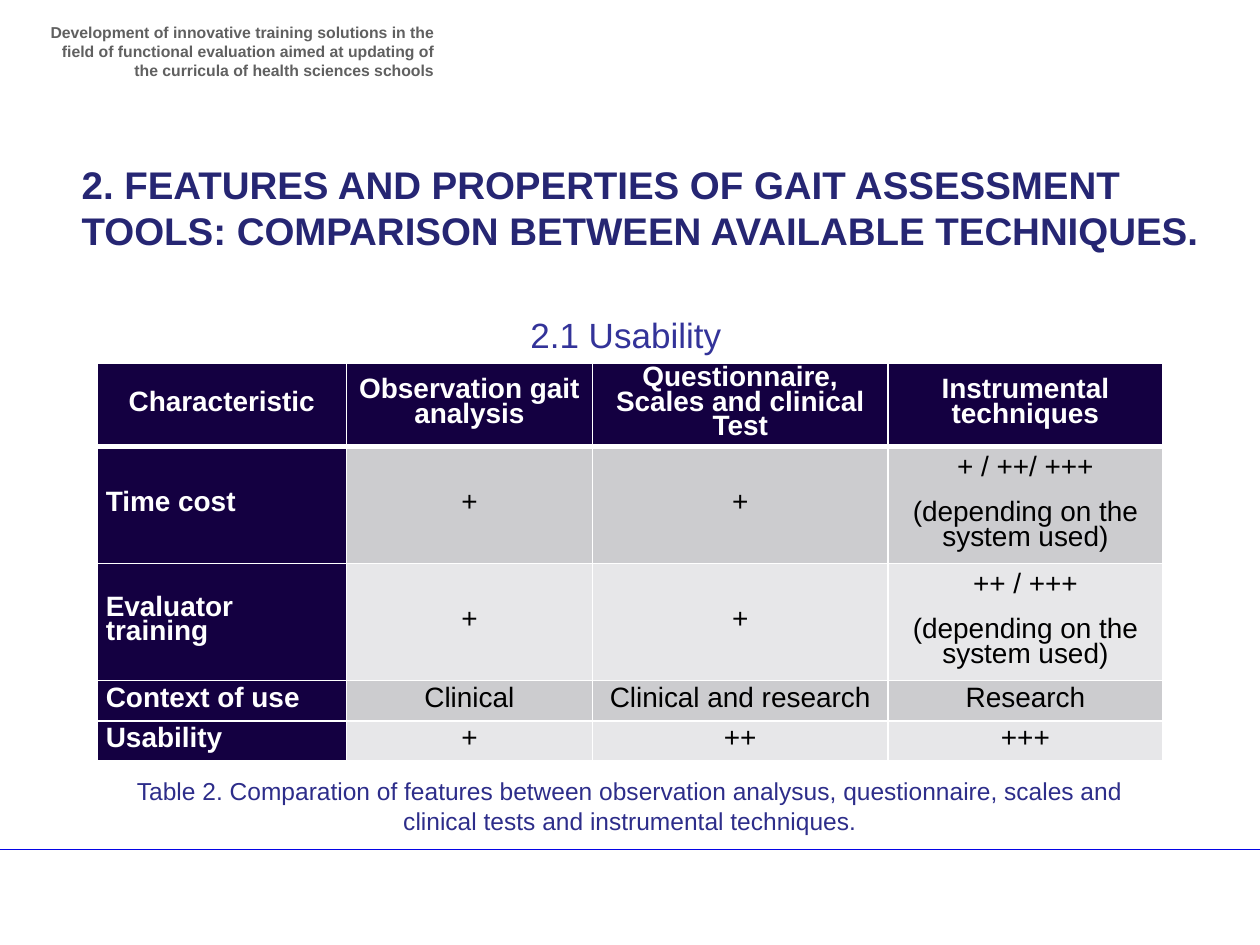
from pptx import Presentation
from pptx import util as u
from pptx.dml import color
from pptx.enum import shapes, text
from pptx.oxml import ns, xmlchemy

Pt = u.Pt
ALIGN = text.PP_ALIGN
FONT = "Arial"
COLORS = {
    "header": "606060",
    "title": "262673",
    "subtitle": "333399",
    "caption": "2D2D8A",
    "rule": "0404E6",
    "navy": "140041",
    "white": "FFFFFF",
    "black": "000000",
    "dark_band": "CCCCCF",
    "light_band": "E7E7E9",
}
COLUMN_WIDTHS = [142.5, 140.5, 169, 157]
ROW_HEIGHTS = [47.5, 67, 67, 23, 23]
DEPENDING = "(depending on the system used)"
ROWS = [
    [["Characteristic"], ["Observation gait analysis"],
     ["Questionnaire, Scales and clinical Test"], ["Instrumental techniques"]],
    [["Time cost"], ["+"], ["+"], ["+ / ++/ +++", DEPENDING]],
    [["Evaluator training"], ["+"], ["+"], ["++ / +++", DEPENDING]],
    [["Context of use"], ["Clinical"], ["Clinical and research"], ["Research"]],
    [["Usability"], ["+"], ["++"], ["+++"]],
]


def rgb(name):
    return color.RGBColor.from_string(COLORS[name])


def add_run(para, words, size, color_name, bold=False):
    span = para.add_run()
    span.text = words
    span.font.name = FONT
    span.font.size = Pt(size)
    span.font.bold = bold
    span.font.color.rgb = rgb(color_name)


def place(shape, box):
    shape.left, shape.top, shape.width, shape.height = map(Pt, box)


def fill_text(shape, words, size, color_name, align, bold=False):
    frame = shape.text_frame
    frame.word_wrap = True
    frame.auto_size = text.MSO_AUTO_SIZE.NONE
    frame.vertical_anchor = text.MSO_ANCHOR.TOP
    para = frame.paragraphs[0]
    para.alignment = align
    add_run(para, words, size, color_name, bold)


def add_title(page, box):
    title = page.shapes.title
    place(title, box)
    fill_text(title, "2. FEATURES AND PROPERTIES OF GAIT ASSESSMENT TOOLS: "
              "COMPARISON BETWEEN AVAILABLE TECHNIQUES.",
              22, "title", ALIGN.LEFT, True)


def add_label(page, box, words, size, color_name, align, bold=False):
    label = page.shapes.add_textbox(*map(Pt, box))
    fill_text(label, words, size, color_name, align, bold)


def add_rule(page, box):
    left, top, width, height = box
    rule = page.shapes.add_connector(
        shapes.MSO_CONNECTOR.STRAIGHT,
        Pt(left), Pt(top), Pt(left + width), Pt(top + height))
    rule.line.color.rgb = rgb("rule")
    rule.line.width = Pt(1)
    rule._element.spPr.append(xmlchemy.OxmlElement("a:effectLst"))


def set_borders(cell, widths):
    properties = cell._tc.get_or_add_tcPr()
    for side, width in widths.items():
        border = xmlchemy.OxmlElement(f"a:ln{side}")
        border.set("w", str(Pt(width)))
        solid = xmlchemy.OxmlElement("a:solidFill")
        shade = xmlchemy.OxmlElement("a:srgbClr")
        shade.set("val", COLORS["white"])
        solid.append(shade)
        border.append(solid)
        properties.append(border)


def fill_cell(cell, lines, row, column):
    heading = row == 0 or column == 0
    set_borders(cell, {"L": 1, "R": 1, "T": 3 if row == 1 else 1,
                       "B": 3 if row == 0 else 1})
    band = "dark_band" if row % 2 else "light_band"
    cell.fill.solid()
    cell.fill.fore_color.rgb = rgb("navy" if heading else band)
    cell.vertical_anchor = text.MSO_ANCHOR.MIDDLE
    cell.margin_left = cell.margin_right = Pt(5)
    cell.margin_top = cell.margin_bottom = 0
    frame = cell.text_frame
    for index, line in enumerate(lines):
        para = frame.add_paragraph() if index else frame.paragraphs[0]
        para.alignment = ALIGN.JUSTIFY if row and column == 0 else ALIGN.CENTER
        para.line_spacing = Pt(14)
        para.space_before = Pt(12 if index else 0)
        add_run(para, line, 16, "white" if heading else "black", heading)


def add_comparison(page, box):
    table = page.shapes.add_table(
        len(ROWS), len(COLUMN_WIDTHS), *map(Pt, box)).table
    table.horz_banding = False
    for column, width in zip(table.columns, COLUMN_WIDTHS):
        column.width = Pt(width)
    for row, height in zip(table.rows, ROW_HEIGHTS):
        row.height = Pt(height)
    for row, entries in enumerate(ROWS):
        for column, lines in enumerate(entries):
            fill_cell(table.cell(row, column), lines, row, column)


def main():
    deck = Presentation()
    deck.slide_width, deck.slide_height = Pt(720), Pt(540)
    page = deck.slides.add_slide(deck.slide_layouts[5])
    add_rule(page, (-3.5, 485.5, 723.5, 0))
    add_label(page, (20, 9.5, 235, 34),
              "Development of innovative training solutions in the ﬁeld of "
              "functional evaluation aimed at updating of the curricula of "
              "health sciences schools", 9, "header", ALIGN.RIGHT, True)
    add_title(page, (39.5, 88.5, 654.5, 60.5))
    add_label(page, (296, 175.5, 127.5, 55.5), "2.1 Usability",
              20, "subtitle", ALIGN.LEFT)
    add_comparison(page, (55.5, 207.5, sum(COLUMN_WIDTHS), sum(ROW_HEIGHTS)))
    add_label(page, (51, 440, 618, 41),
              "Table 2. Comparation of features between observation analysus, "
              "questionnaire, scales and clinical tests and instrumental "
              "techniques.", 14, "caption", ALIGN.CENTER)
    deck.save("out.pptx")


if __name__ == "__main__":
    main()
